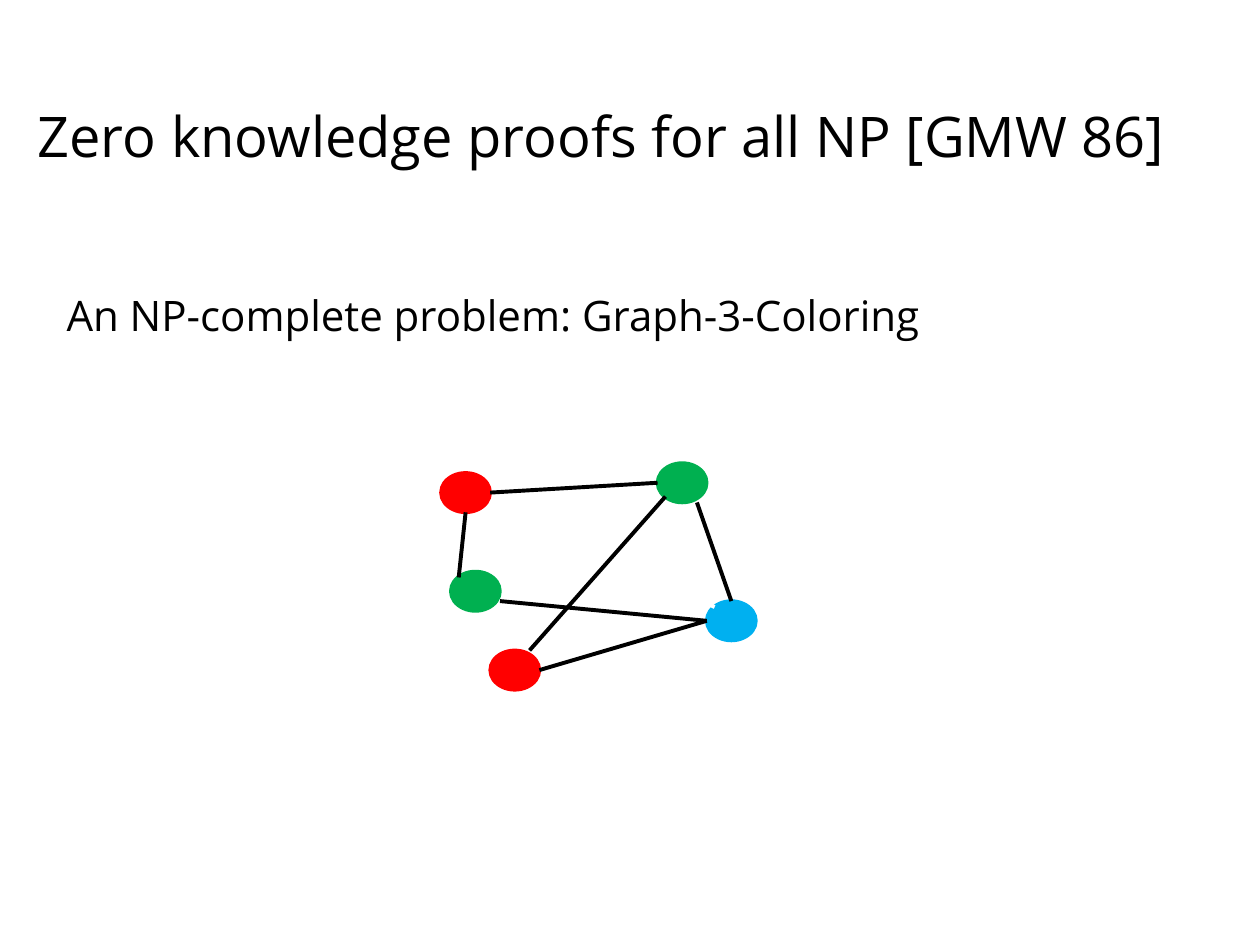
import pptx
import pptx.dml.color
import pptx.enum.shapes
import pptx.enum.text
import pptx.oxml
import pptx.util

COLORS = {
    "ink": "000000",
    "paper": "FFFFFF",
    "red": "FF0000",
    "green": "00B050",
    "blue": "00B0F0",
}
FONT = "Open Sans"
WIDTH = pptx.util.Inches(10)
HEIGHT = pptx.util.Inches(7.5)

GRID_COLUMNS, GRID_ROWS = 32, 23
NODE_COLUMNS, NODE_ROWS = 5, 4
NODES = [
    (0, 1, "red"),
    (1, 11, "green"),
    (5, 19, "red"),
    (27, 14, "blue"),
    (22, 0, "green"),
]
EDGES = [
    ((5, 3), (22, 2), "ink"),
    ((26, 4), (29.5, 14), "ink"),
    ((2.5, 5), (1.8, 11.6), "ink"),
    ((10, 21), (27, 16), "ink"),
    ((5, 4), (27.8, 14.6), "paper"),
    ((9, 19), (22.8, 3.4), "ink"),
    ((6, 14), (27, 16), "ink"),
]


def rgb(name):
    return pptx.dml.color.RGBColor.from_string(COLORS[name])


def share_box(left, top, width, height):
    return (
        round(left * WIDTH),
        round(top * HEIGHT),
        round(width * WIDTH),
        round(height * HEIGHT),
    )


def set_values(target, values):
    for name, value in values.items():
        setattr(target, name, value)


def add_text(page, box, text, size, anchor):
    frame = page.shapes.add_textbox(*box).text_frame
    set_values(frame, {"word_wrap": True, "vertical_anchor": anchor})
    para = frame.paragraphs[0]
    para.alignment = pptx.enum.text.PP_ALIGN.LEFT
    span = para.add_run()
    span.text = text
    set_values(span.font, {"name": FONT, "size": pptx.util.Pt(size)})
    span.font.color.rgb = rgb("ink")


def add_graph(page, box):
    left, top, width, height = box
    column, row = width / GRID_COLUMNS, height / GRID_ROWS
    graph = page.shapes.add_group_shape()

    def place(point):
        return round(left + point[0] * column), round(top + point[1] * row)

    for node_column, node_row, color in NODES:
        node = graph.shapes.add_shape(
            pptx.enum.shapes.MSO_SHAPE.OVAL,
            *place((node_column, node_row)),
            round(NODE_COLUMNS * column),
            round(NODE_ROWS * row),
        )
        node.shadow.inherit = False
        node.fill.solid()
        node.fill.fore_color.rgb = rgb(color)
        node.line.color.rgb = rgb(color)
        node.line.width = pptx.util.Pt(2)

    for start, end, color in EDGES:
        edge = graph.shapes.add_connector(
            pptx.enum.shapes.MSO_CONNECTOR.STRAIGHT, *place(start), *place(end)
        )
        edge.line.color.rgb = rgb(color)
        edge.line.width = pptx.util.Pt(2.25)
        edge._element.spPr.append(
            pptx.oxml.parse_xml(
                '<a:effectLst xmlns:a="http://schemas.openxmlformats.org/drawingml/2006/main"/>'
            )
        )


def main():
    deck = pptx.Presentation()
    set_values(deck, {"slide_width": WIDTH, "slide_height": HEIGHT})
    page = deck.slides.add_slide(deck.slide_layouts[6])
    anchors = pptx.enum.text.MSO_ANCHOR
    add_text(
        page,
        share_box(0.02, 0.08, 1, 0.127),
        "Zero knowledge proofs for all NP [GMW 86]",
        32,
        anchors.MIDDLE,
    )
    add_graph(page, share_box(0.35, 0.49, 0.25, 0.24))
    add_text(
        page,
        share_box(0.043, 0.3, 0.89, 0.067),
        "An NP-complete problem: Graph-3-Coloring",
        24,
        anchors.TOP,
    )
    deck.save("out.pptx")


if __name__ == "__main__":
    main()
